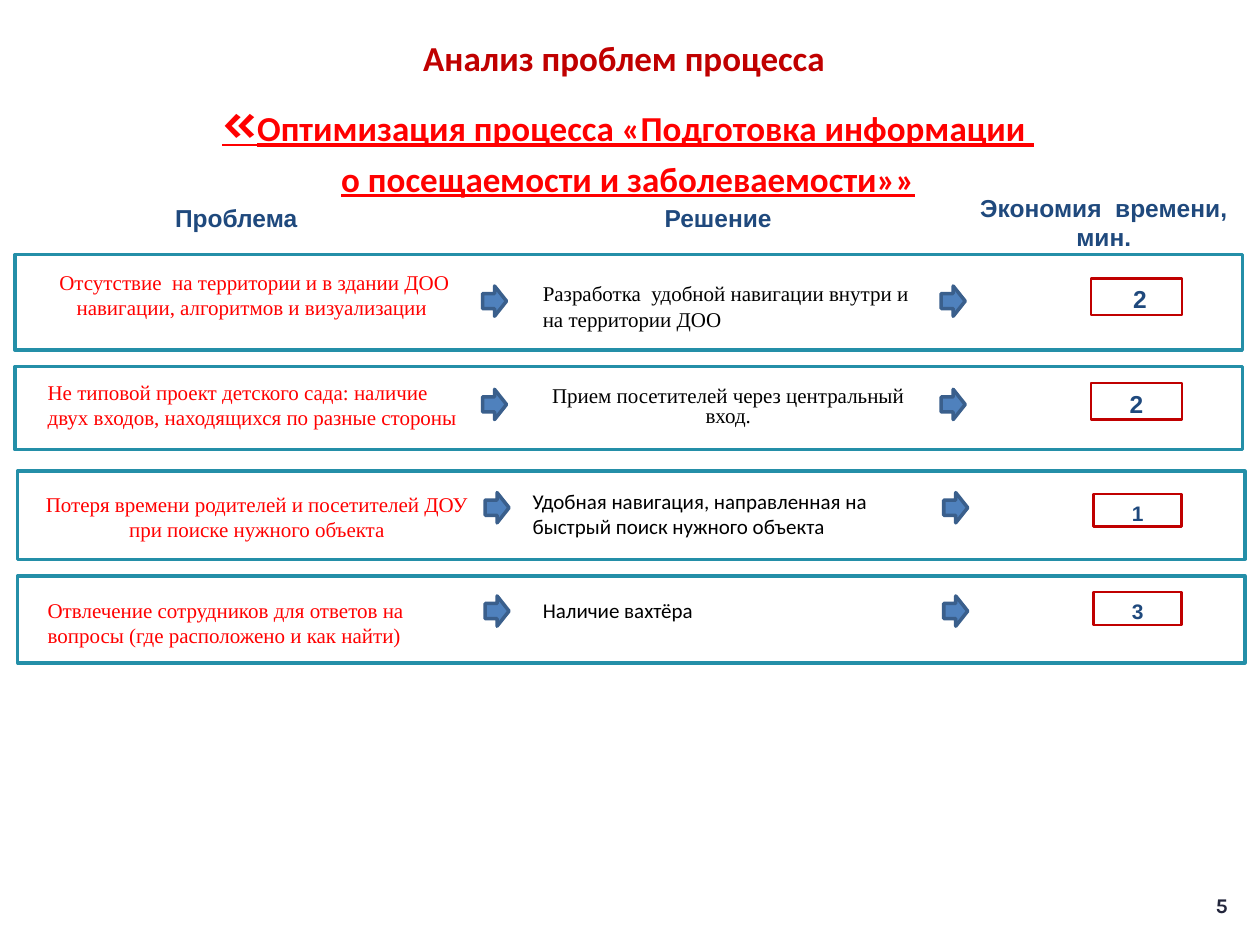
from copy import deepcopy

from pptx import Presentation
from pptx import util as u
from pptx.dml.color import RGBColor
from pptx.enum import shapes, text

RED = RGBColor(0xFF, 0x00, 0x00)
DARK = RGBColor(0xC0, 0x00, 0x00)
NAVY = RGBColor(0x1F, 0x49, 0x7D)
TEAL = RGBColor(0x24, 0x8F, 0xA8)
BLUE = RGBColor(0x4F, 0x81, 0xBD)
EDGE = RGBColor(0x3A, 0x5F, 0x8C)
BLACK = RGBColor(0x00, 0x00, 0x00)
INK = RGBColor(0x23, 0x26, 0x3C)

SERIF = "Times New Roman"
PLAIN = (0.1, 0.05, 0.1, 0.05)
HEAD = (0.1, 0.05, 0.1, 0.01)
LOW = (0.1, 0.09, 0.1, 0.01)
MID = text.MSO_ANCHOR.MIDDLE
TOP = text.MSO_ANCHOR.TOP
LEFT = text.PP_ALIGN.LEFT
CENTER = text.PP_ALIGN.CENTER
RECT = shapes.MSO_SHAPE.RECTANGLE
ARROW = shapes.MSO_SHAPE.RIGHT_ARROW

# Column heads: place, label
HEADS = [
    ((7.52, 1.48, 2.48, 0.53), "Экономия  времени, мин."),
    ((0.96, 1.56, 1.83, 0.3), "Проблема"),
    ((4.83, 1.56, 1.74, 0.3), "Решение"),
]

# Rows: frame (left, top, height), badge (place, label, size)
ROWS = [
    ((0.12, 2.02, 0.76), (8.66, 2.21, 0.72, 0.29), " 2", 14),
    ((0.12, 2.91, 0.66), (8.66, 3.04, 0.72, 0.29), "2", 14),
    ((0.14, 3.74, 0.7), (8.68, 3.92, 0.7, 0.26), "1", 12),
    ((0.14, 4.57, 0.69), (8.68, 4.7, 0.7, 0.26), "3", 12),
]

# Notes: place, wording, font, colour, then layout options
NOTES = [
    ((0.02, 2.05, 4, 0.67),
     "Отсутствие  на территории и в здании ДОО навигации, алгоритмов и визуализации ",
     SERIF, RED, dict(pad=LOW, align=CENTER)),
    ((4.21, 2.18, 3.23, 0.5),
     "Разработка  удобной навигации внутри и на территории ДОО",
     SERIF, BLACK, {}),
    ((0.28, 2.96, 3.46, 0.5),
     "Не типовой проект детского сада: наличие двух входов, находящихся по разные стороны",
     SERIF, RED, {}),
    ((4.17, 2.98, 3.22, 0.43),
     "Прием посетителей через центральный вход.",
     SERIF, BLACK, dict(pad=LOW, align=CENTER, anchor=MID, gap=0.8)),
    ((0.14, 3.81, 3.8, 0.71),
     "Потеря времени родителей и посетителей ДОУ при поиске нужного объекта",
     SERIF, RED, dict(pad=LOW, align=CENTER)),
    ((4.13, 3.83, 3.37, 0.5),
     "Удобная навигация, направленная на быстрый поиск нужного объекта",
     "Calibri", BLACK, {}),
    ((0.28, 4.69, 3.54, 0.5),
     "Отвлечение сотрудников для ответов на вопросы (где расположено и как найти)",
     SERIF, RED, {}),
    ((4.21, 4.69, 3.07, 0.3), "Наличие вахтёра", "Calibri", BLACK, {}),
]


def inches(spot):
    return [u.Inches(n) for n in spot]


def add_run(para, words, font, size, color, bold=False, line=False):
    run = para.add_run()
    run.text = words
    face = run.font
    face.name, face.size, face.bold = font, u.Pt(size), bold
    face.underline = line
    face.color.rgb = color
    return run


def add_break(para, run):
    """Break the line at the height of the given run."""
    para.add_line_break()
    para._p[-1].append(deepcopy(run._r.rPr))


def set_frame(shape, pad=PLAIN, align=LEFT, anchor=TOP, gap=None):
    frame = shape.text_frame
    frame.word_wrap = True
    frame.auto_size = text.MSO_AUTO_SIZE.NONE
    frame.vertical_anchor = anchor
    (frame.margin_left, frame.margin_top,
     frame.margin_right, frame.margin_bottom) = inches(pad)
    para = frame.paragraphs[0]
    para.alignment = align
    if gap:
        para.line_spacing = gap
    return para


def add_text(slide, spot, words, font, size, color, bold=False, **look):
    box = slide.shapes.add_textbox(*inches(spot))
    add_run(set_frame(box, **look), words, font, size, color, bold)


def add_box(slide, kind, spot, edge, width, fill=None):
    box = slide.shapes.add_shape(kind, *inches(spot))
    box.shadow.inherit = False
    box.line.color.rgb = edge
    box.line.width = u.Pt(width)
    if fill is None:
        box.fill.background()
    else:
        box.fill.solid()
        box.fill.fore_color.rgb = fill
    return box


def add_title(slide):
    title = slide.shapes.title
    title.left, title.top, title.width, title.height = inches((0.23, 0.36, 9.51, 1.12))
    para = set_frame(title, align=CENTER, anchor=MID, gap=1.1)
    run = add_run(para, "Анализ проблем процесса ", "Calibri", 20, DARK, True)
    add_break(para, run)
    add_run(para, "«", "Karla", 32, RED, True, True)
    run = add_run(para, "Оптимизация процесса «Подготовка информации ",
                  "Calibri", 20, RED, True, True)
    add_break(para, run)
    add_run(para, "о посещаемости и заболеваемости»»", "Calibri", 20, RED, True, True)


def add_row(slide, index, frame, spot, label, size):
    left, top, height = frame
    badge = add_box(slide, RECT, spot, DARK, 1.5)
    para = set_frame(badge, LOW, CENTER, MID, 0.8)
    add_run(para, label, "Arial", size, NAVY, True)
    add_box(slide, RECT, (left, top, 9.74, height), TEAL, 2)
    for shift in (3.71, 7.35):
        place = (left + shift, 2.27 + 0.82 * index, 0.19, 0.24)
        add_box(slide, ARROW, place, EDGE, 2, BLUE)


def main():
    deck = Presentation()
    deck.slide_width, deck.slide_height = inches((10, 7.5))
    slide = deck.slides.add_slide(deck.slide_layouts[5])

    # Title and column heads
    add_title(slide)
    for spot, label in HEADS:
        add_text(slide, spot, label, "Arial", 14, NAVY, True, pad=HEAD, align=CENTER)

    # Framed rows with arrows and minutes
    for index, row in enumerate(ROWS):
        add_row(slide, index, *row)

    # Problems and solutions
    for spot, words, font, color, look in NOTES:
        add_text(slide, spot, words, font, 12, color, **look)

    # Page number
    add_text(slide, (9.45, 7.03, 0.49, 0.31), "5", "Karla", 12, INK, True,
             align=CENTER, anchor=MID)
    deck.save("out.pptx")


if __name__ == "__main__":
    main()
